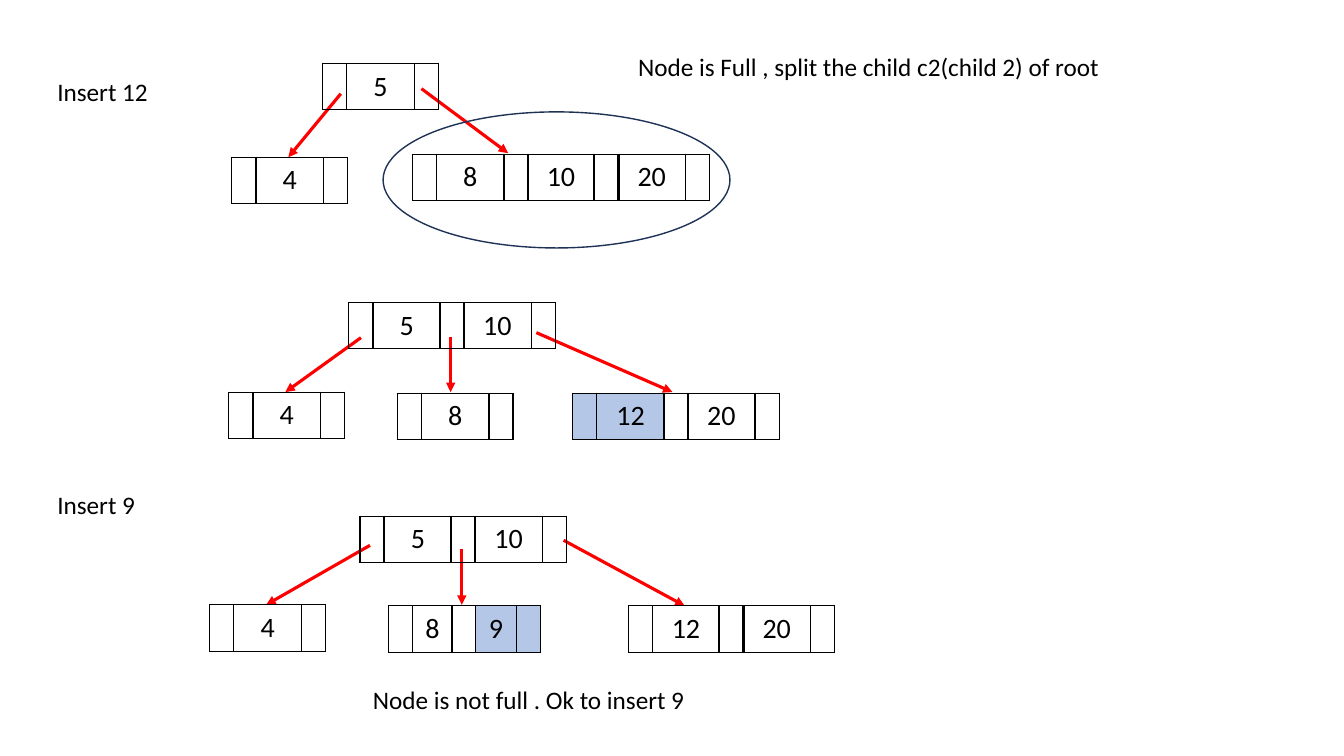
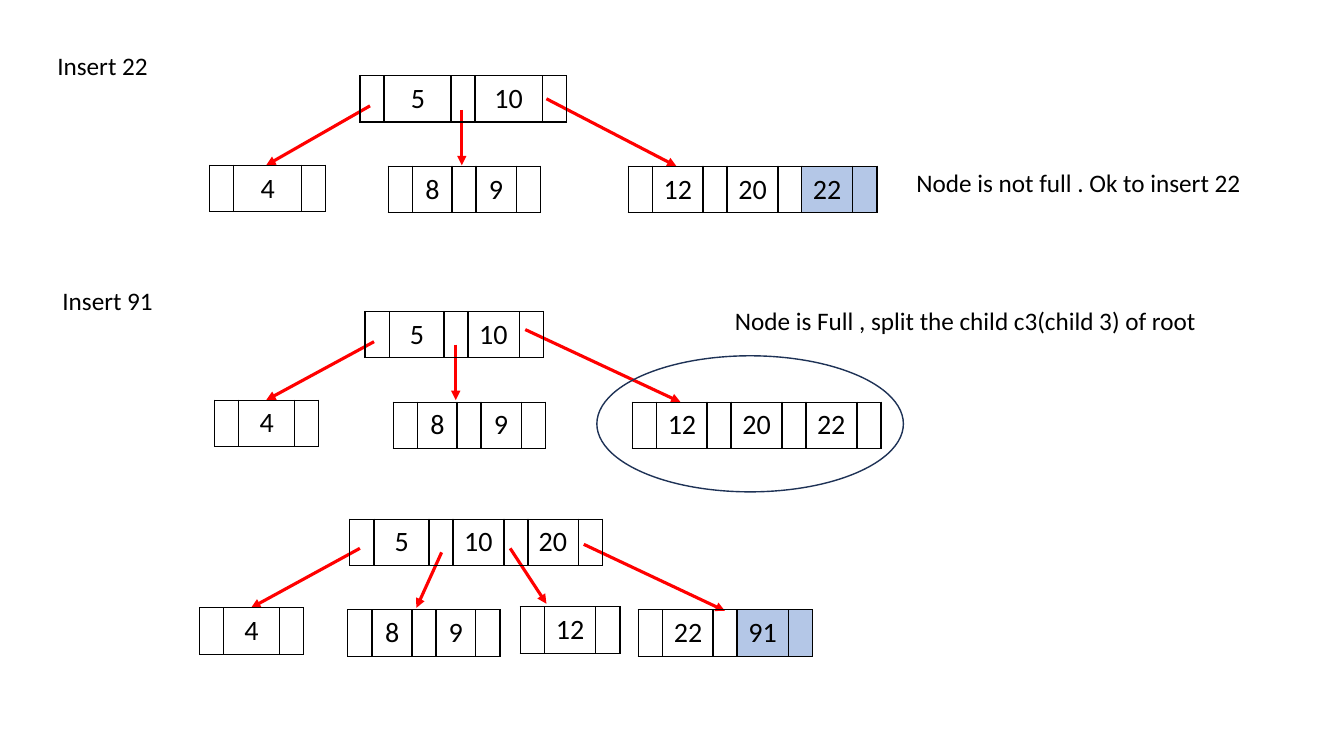
"""Build two slides that show insertions into a B-tree, split by split."""
from dataclasses import dataclass

from lxml import etree
from pptx import Presentation
from pptx.dml.color import RGBColor
from pptx.enum.shapes import MSO_CONNECTOR, MSO_SHAPE
from pptx.enum.text import MSO_ANCHOR, MSO_AUTO_SIZE, PP_ALIGN
from pptx.oxml.ns import qn
from pptx.slide import Slide
from pptx.table import _Cell
from pptx.text.text import _Paragraph
from pptx.util import Emu, Pt

STRAIGHT = MSO_CONNECTOR.STRAIGHT
ELLIPSE = MSO_SHAPE.OVAL
MIDDLE = MSO_ANCHOR.MIDDLE
GROW = MSO_AUTO_SIZE.SHAPE_TO_FIT_TEXT
CENTER = PP_ALIGN.CENTER

EMU_PER_PX = 9144
SLIDE_WIDTH, SLIDE_HEIGHT = 1333, 750
BLANK_LAYOUT = 6
POINTER_WIDTH, NODE_HEIGHT, LABEL_HEIGHT = 23, 46, 40
WIDE, MEDIUM, NARROW, SLIM = 67, 55, 51, 40


@dataclass(frozen=True)
class Theme:
    font: str = "Calibri"
    label_size: int = 18
    key_size: int = 20
    border_width: float = 1
    arrow_width: float = 2.25
    ink: str = "000000"
    arrow: str = "FF0000"
    oval: str = "1E3256"
    inserted: str = "B4C7E7"


THEME = Theme()


@dataclass(frozen=True)
class Key:
    text: str
    width: int = WIDE
    filled: tuple[int, ...] = ()


@dataclass(frozen=True)
class Node:
    left: int
    top: int
    keys: tuple[Key, ...]


@dataclass(frozen=True)
class Arrow:
    start_x: int
    start_y: int
    end_x: int
    end_y: int


@dataclass(frozen=True)
class Oval:
    left: int
    top: int
    width: int
    height: int


@dataclass(frozen=True)
class Label:
    left: int
    top: int
    width: int
    text: str


@dataclass(frozen=True)
class Page:
    nodes: tuple[Node, ...]
    arrows: tuple[Arrow, ...]
    oval: Oval
    labels: tuple[Label, ...]


FOUR, FIVE, EIGHT, TEN = Key("4"), Key("5"), Key("8"), Key("10")
TWELVE, TWENTY = Key("12"), Key("20")
MEDIUM_FOUR, MEDIUM_FIVE = Key("4", MEDIUM), Key("5", MEDIUM)
SLIM_EIGHT, SLIM_NINE = Key("8", SLIM), Key("9", SLIM)
NARROW_TEN, NARROW_TWELVE = Key("10", NARROW), Key("12", NARROW)
NARROW_TWENTY, NARROW_TWENTY_TWO = Key("20", NARROW), Key("22", NARROW)
NEW_TWELVE = Key("12", WIDE, (0, 1))
NEW_NINE = Key("9", SLIM, (1, 2))
NEW_TWENTY_TWO = Key("22", NARROW, (1, 2))
NEW_NINETY_ONE = Key("91", NARROW, (1, 2))

PAGES = (
    Page(
        nodes=(
            Node(320, 63, (FIVE,)),
            Node(230, 156, (FOUR,)),
            Node(409, 153, (EIGHT, TEN, TWENTY)),
            Node(346, 300, (FIVE, TEN)),
            Node(227, 389, (FOUR,)),
            Node(394, 390, (EIGHT,)),
            Node(568, 390, (NEW_TWELVE, TWENTY)),
            Node(357, 512, (FIVE, TEN)),
            Node(208, 600, (FOUR,)),
            Node(385, 601, (SLIM_EIGHT, NEW_NINE)),
            Node(623, 601, (TWELVE, TWENTY)),
        ),
        arrows=(
            Arrow(338, 93, 286, 156),
            Arrow(418, 88, 504, 152),
            Arrow(358, 335, 283, 389),
            Arrow(447, 334, 447, 389),
            Arrow(532, 330, 667, 389),
            Arrow(367, 541, 264, 600),
            Arrow(458, 545, 458, 600),
            Arrow(559, 536, 679, 601),
        ),
        oval=Oval(380, 111, 344, 135),
        labels=(
            Label(47, 71, 118, "Insert 12"),
            Label(47, 481, 118, "Insert 9"),
            Label(623, 46, 511, "Node is Full , split the child c2(child 2) of root"),
            Label(360, 674, 375, "Node is not full . Ok to insert 9"),
        ),
    ),
    Page(
        nodes=(
            Node(357, 75, (FIVE, TEN)),
            Node(208, 164, (FOUR,)),
            Node(385, 165, (SLIM_EIGHT, SLIM_NINE)),
            Node(623, 165, (NARROW_TWELVE, NARROW_TWENTY, NEW_TWENTY_TWO)),
            Node(362, 309, (MEDIUM_FIVE, NARROW_TEN)),
            Node(213, 397, (MEDIUM_FOUR,)),
            Node(390, 399, (SLIM_EIGHT, SLIM_NINE)),
            Node(627, 399, (NARROW_TWELVE, NARROW_TWENTY, NARROW_TWENTY_TWO)),
            Node(347, 515, (MEDIUM_FIVE, NARROW_TEN, NARROW_TWENTY)),
            Node(198, 603, (MEDIUM_FOUR,)),
            Node(345, 605, (SLIM_EIGHT, SLIM_NINE)),
            Node(516, 602, (NARROW_TWELVE,)),
            Node(633, 605, (NARROW_TWENTY_TWO, NEW_NINETY_ONE)),
        ),
        arrows=(
            Arrow(367, 105, 264, 164),
            Arrow(458, 109, 458, 164),
            Arrow(542, 98, 671, 165),
            Arrow(371, 339, 264, 397),
            Arrow(452, 342, 452, 397),
            Arrow(521, 327, 675, 399),
            Arrow(357, 544, 249, 603),
            Arrow(438, 548, 413, 603),
            Arrow(506, 544, 542, 599),
            Arrow(579, 540, 719, 606),
        ),
        oval=Oval(592, 353, 304, 135),
        labels=(
            Label(47, 45, 118, "Insert 22"),
            Label(52, 278, 118, "Insert 91"),
            Label(719, 298, 547, "Node is Full , split the child c3(child 3) of root"),
            Label(899, 161, 375, "Node is not full . Ok to insert 22"),
        ),
    ),
)


def px(length: int) -> Emu:
    return Emu(length * EMU_PER_PX)


def color(value: str) -> RGBColor:
    return RGBColor.from_string(value)


def set_font(paragraph: _Paragraph, size: int) -> None:
    paragraph.font.name = THEME.font
    paragraph.font.size = Pt(size)
    paragraph.font.color.rgb = color(THEME.ink)


def add_borders(cell: _Cell) -> None:
    properties = cell._tc.get_or_add_tcPr()
    for side in ("L", "R", "T", "B"):
        border = etree.SubElement(properties, qn(f"a:ln{side}"), w=str(Pt(THEME.border_width)))
        fill = etree.SubElement(border, qn("a:solidFill"))
        etree.SubElement(fill, qn("a:srgbClr"), val=THEME.ink)


def draw_key(slide: Slide, key: Key, left: int, top: int) -> None:
    widths = (POINTER_WIDTH, key.width, POINTER_WIDTH)
    frame = slide.shapes.add_table(
        1, len(widths), px(left), px(top), px(sum(widths)), px(NODE_HEIGHT)
    )
    table = frame.table
    table.first_row = table.horz_banding = False
    texts = ("", key.text, "")
    for index, (width, text) in enumerate(zip(widths, texts)):
        table.columns[index].width = px(width)
        cell = table.cell(0, index)
        add_borders(cell)
        if index in key.filled:
            cell.fill.solid()
            cell.fill.fore_color.rgb = color(THEME.inserted)
        else:
            cell.fill.background()
        cell.vertical_anchor = MIDDLE
        cell.text = text
        paragraph = cell.text_frame.paragraphs[0]
        paragraph.alignment = CENTER
        set_font(paragraph, THEME.key_size)


def draw_node(slide: Slide, node: Node) -> None:
    left = node.left
    for key in node.keys:
        draw_key(slide, key, left, node.top)
        left += POINTER_WIDTH + key.width


def draw_arrow(slide: Slide, arrow: Arrow) -> None:
    connector = slide.shapes.add_connector(
        STRAIGHT, px(arrow.start_x), px(arrow.start_y), px(arrow.end_x), px(arrow.end_y)
    )
    connector.line.color.rgb = color(THEME.arrow)
    connector.line.width = Pt(THEME.arrow_width)
    etree.SubElement(connector.line._get_or_add_ln(), qn("a:tailEnd"), type="triangle")
    etree.SubElement(connector._element.spPr, qn("a:effectLst"))


def draw_oval(slide: Slide, oval: Oval) -> None:
    shape = slide.shapes.add_shape(
        ELLIPSE, px(oval.left), px(oval.top), px(oval.width), px(oval.height)
    )
    shape.shadow.inherit = False
    shape.fill.background()
    shape.line.color.rgb = color(THEME.oval)
    shape.line.width = Pt(THEME.border_width)


def draw_label(slide: Slide, label: Label) -> None:
    box = slide.shapes.add_textbox(
        px(label.left), px(label.top), px(label.width), px(LABEL_HEIGHT)
    )
    box.text_frame.word_wrap = True
    box.text_frame.auto_size = GROW
    paragraph = box.text_frame.paragraphs[0]
    paragraph.text = label.text
    set_font(paragraph, THEME.label_size)


def draw_page(slide: Slide, page: Page) -> None:
    for arrow in page.arrows:
        draw_arrow(slide, arrow)
    for node in page.nodes:
        draw_node(slide, node)
    draw_oval(slide, page.oval)
    for label in page.labels:
        draw_label(slide, label)


def main() -> None:
    presentation = Presentation()
    presentation.slide_width = px(SLIDE_WIDTH)
    presentation.slide_height = px(SLIDE_HEIGHT)
    for page in PAGES:
        draw_page(presentation.slides.add_slide(presentation.slide_layouts[BLANK_LAYOUT]), page)
    presentation.save("out.pptx")


if __name__ == "__main__":
    main()
